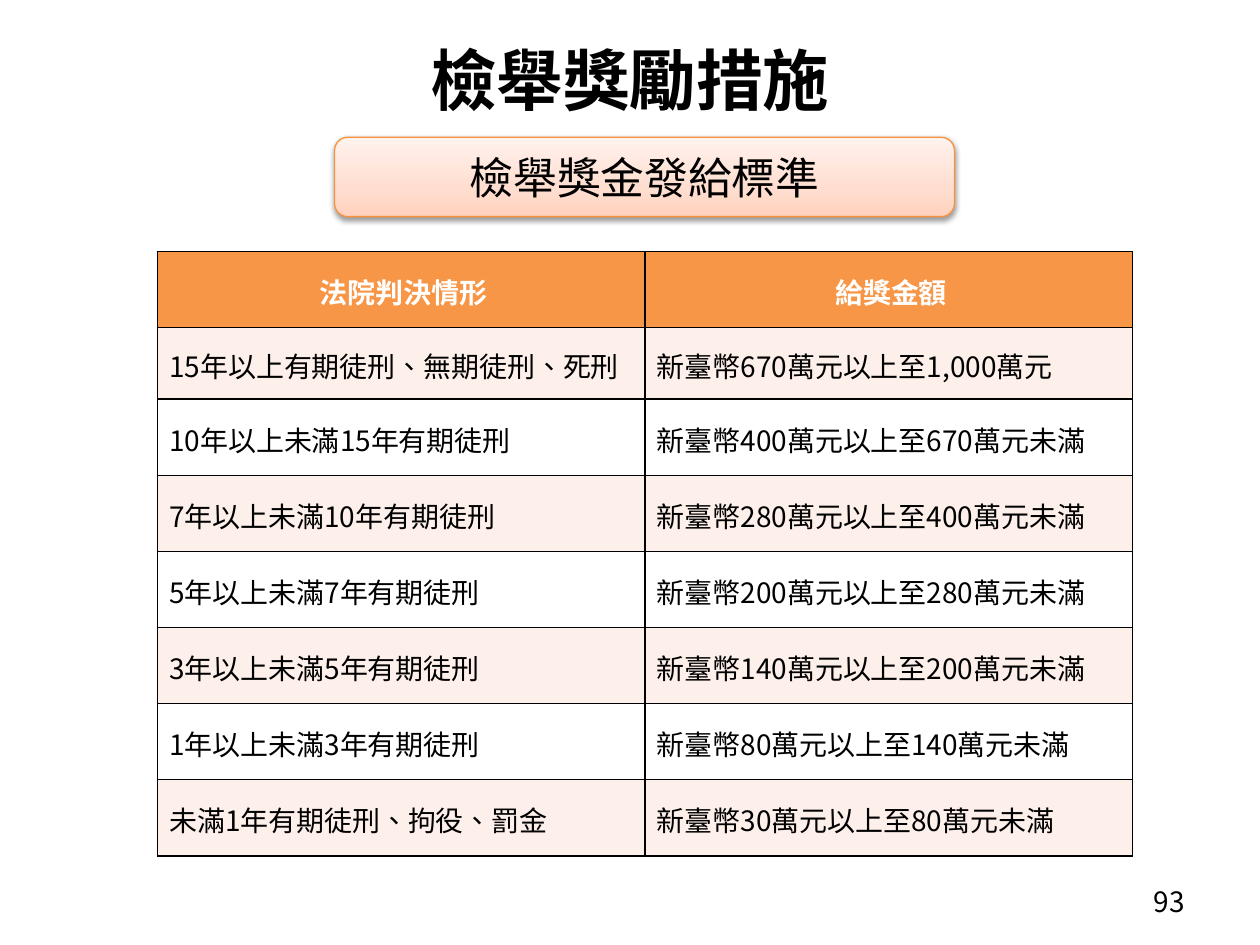
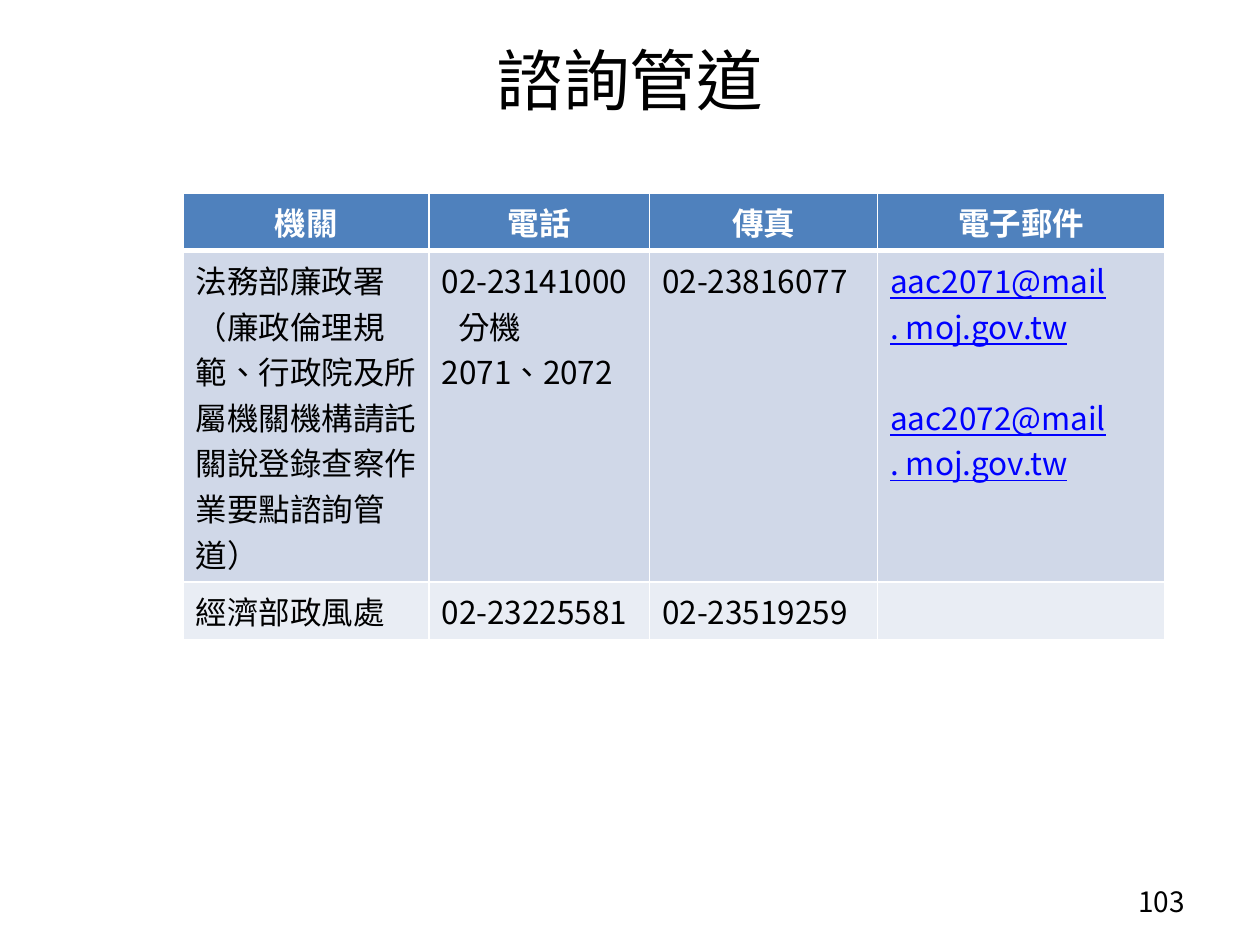
from dataclasses import dataclass

from lxml.etree import SubElement
from pptx import Presentation
from pptx.dml.color import RGBColor
from pptx.enum.shapes import MSO_SHAPE
from pptx.enum.text import MSO_ANCHOR, PP_ALIGN
from pptx.oxml.ns import qn
from pptx.util import Inches, Pt

SLIDE_WIDTH, SLIDE_HEIGHT = Inches(10), Inches(7.5)


@dataclass(frozen=True)
class Theme:
    title_font: str = "Noto Sans CJK TC"
    body_font: str = "Noto Sans CJK SC"
    header_font: str = "Arial"
    language: str = "zh-TW"
    title_size: int = 38
    banner_size: float = 25
    contact_size: int = 18
    small_size: int = 16
    black: str = "000000"
    white: str = "FFFFFF"
    link: str = "0000FF"
    orange: str = "F79646"
    banner_line: str = "F69240"
    banner_stops: tuple = ((0, "FFD2BD"), (35, "FFDED0"), (100, "FFF2ED"))
    orange_bands: tuple = ("FDEFE9", "FFFFFF")
    blue: str = "4F81BD"
    blue_bands: tuple = ("D0D8E8", "E9EDF4")


THEME = Theme()

REWARDS = [
    ("法院判決情形", "給獎金額"),
    ("15年以上有期徒刑、無期徒刑、死刑", "新臺幣670萬元以上至1,000萬元"),
    ("10年以上未滿15年有期徒刑", "新臺幣400萬元以上至670萬元未滿"),
    ("7年以上未滿10年有期徒刑", "新臺幣280萬元以上至400萬元未滿"),
    ("5年以上未滿7年有期徒刑", "新臺幣200萬元以上至280萬元未滿"),
    ("3年以上未滿5年有期徒刑", "新臺幣140萬元以上至200萬元未滿"),
    ("1年以上未滿3年有期徒刑", "新臺幣80萬元以上至140萬元未滿"),
    ("未滿1年有期徒刑、拘役、罰金", "新臺幣30萬元以上至80萬元未滿"),
]

# \v is a line break inside a paragraph, \n starts a new paragraph
CONTACTS = [
    ("機關", "電話", "傳真", "電子郵件"),
    ("法務部廉政署（廉政倫理規範、行政院及所屬機關機構請託關說登錄查察作業要點諮詢管道）",
     "02-23141000\n分機\v2071、2072", "02-23816077",
     "aac2071@mail\v. moj.gov.tw\naac2072@mail\v. moj.gov.tw"),
    ("經濟部政風處", "02-23225581", "02-23519259", ""),
]


def percent_box(left, top, width, height):
    """Turn percentages of the slide into left, top, width, height."""
    return (int(SLIDE_WIDTH * left / 100), int(SLIDE_HEIGHT * top / 100),
            int(SLIDE_WIDTH * width / 100), int(SLIDE_HEIGHT * height / 100))


def format_text(text_frame, size, color, font, align=PP_ALIGN.LEFT,
                bold=False, underline=False, east_asian=None):
    for paragraph in text_frame.paragraphs:
        paragraph.alignment = align
        # Keep punctuation inside the text area
        paragraph._p.get_or_add_pPr().set("hangingPunct", "0")
        for run in paragraph.runs:
            run.font.size = Pt(size)
            run.font.bold = bold
            run.font.underline = underline
            run.font.color.rgb = RGBColor.from_string(color)
            run.font.name = font
            properties = run.font._element
            properties.set("lang", THEME.language)
            SubElement(properties, qn("a:ea"), typeface=east_asian or font)


def add_titled_slide(presentation, title, number, bold=False):
    slide = presentation.slides.add_slide(presentation.slide_layouts[5])
    heading = slide.shapes.title
    heading.left, heading.top, heading.width, heading.height = percent_box(5, 0, 90, 16.67)
    heading.text_frame.text = title
    heading.text_frame.vertical_anchor = MSO_ANCHOR.MIDDLE
    format_text(heading.text_frame, THEME.title_size, THEME.black, THEME.title_font,
                PP_ALIGN.CENTER, bold)

    # Page number
    page = slide.shapes.add_textbox(*percent_box(71.7, 92.67, 23.3, 5.33))
    page.text_frame.word_wrap = True
    page.text_frame.vertical_anchor = MSO_ANCHOR.MIDDLE
    page.text_frame.text = number
    format_text(page.text_frame, THEME.small_size, THEME.black, THEME.title_font, PP_ALIGN.RIGHT)
    return slide


def add_color(parent, color):
    return SubElement(parent, qn("a:srgbClr"), val=color)


def add_banner(slide, text, box):
    banner = slide.shapes.add_shape(MSO_SHAPE.ROUNDED_RECTANGLE, *box)
    banner.line.color.rgb = RGBColor.from_string(THEME.banner_line)
    banner.line.width = Pt(0.75)

    # Gradient running from bottom to top
    banner.fill.gradient()
    banner.fill.gradient_angle = 90
    stops = banner.element.spPr.find(".//" + qn("a:gsLst"))
    for stop in list(stops):
        stops.remove(stop)
    for position, color in THEME.banner_stops:
        add_color(SubElement(stops, qn("a:gs"), pos=str(position * 1000)), color)

    # Soft shadow below
    banner.shadow.inherit = False
    effects = banner.element.spPr.find(qn("a:effectLst"))
    shadow = SubElement(effects, qn("a:outerShdw"), blurRad=str(Pt(3.1)),
                        dist=str(Pt(1.6)), dir="5400000", rotWithShape="0")
    SubElement(add_color(shadow, THEME.black), qn("a:alpha"), val="38000")

    banner.text_frame.vertical_anchor = MSO_ANCHOR.MIDDLE
    banner.text_frame.text = text
    format_text(banner.text_frame, THEME.banner_size, THEME.black, THEME.body_font,
                PP_ALIGN.CENTER)


def set_borders(cell, color, top_width=1, bottom_width=1):
    properties = cell._tc.get_or_add_tcPr()
    for side, width in (("L", 1), ("R", 1), ("T", top_width), ("B", bottom_width)):
        line = SubElement(properties, qn("a:ln" + side), w=str(Pt(width)))
        add_color(SubElement(line, qn("a:solidFill")), color)


def add_banded_table(slide, rows, box, widths, heights, header_fill, bands,
                     border, size, header_font, header_rule=1):
    table = slide.shapes.add_table(len(rows), len(rows[0]), *box).table
    table.first_row = table.horz_banding = False
    for column, width in zip(table.columns, widths):
        column.width = Inches(width)
    for index, (row, height, texts) in enumerate(zip(table.rows, heights, rows)):
        row.height = Inches(height)
        header = index == 0
        fill = header_fill if header else bands[(index - 1) % len(bands)]
        # The rule under the header is also the top of the first body row
        top_width = header_rule if index == 1 else 1
        bottom_width = header_rule if header else 1
        for cell, text in zip(row.cells, texts):
            set_borders(cell, border, top_width, bottom_width)
            cell.fill.solid()
            cell.fill.fore_color.rgb = RGBColor.from_string(fill)
            cell.text_frame.text = text
            if header:
                format_text(cell.text_frame, size, THEME.white, header_font,
                            PP_ALIGN.CENTER, True, east_asian=THEME.body_font)
            else:
                format_text(cell.text_frame, size, THEME.black, THEME.body_font)
    return table


def build_rewards(presentation):
    slide = add_titled_slide(presentation, "檢舉獎勵措施", "93", bold=True)
    add_banner(slide, "檢舉獎金發給標準", percent_box(26.55, 14.53, 49.2, 8.4))
    first_height = 0.57
    other_height = (4.8 - first_height) / (len(REWARDS) - 1)
    heights = [other_height, first_height] + [other_height] * (len(REWARDS) - 2)
    table = add_banded_table(
        slide, REWARDS, percent_box(12.5, 26.6, 77.4, 64), [3.87] * 2, heights,
        THEME.orange, THEME.orange_bands, THEME.black, THEME.small_size, THEME.body_font)
    for cell in table.iter_cells():
        cell.vertical_anchor = MSO_ANCHOR.MIDDLE
        cell.margin_left = cell.margin_right = Inches(0.06)
        cell.margin_top = cell.margin_bottom = 0
        paragraph = cell.text_frame.paragraphs[0]
        paragraph.line_spacing = Pt(25)
        paragraph._p.get_or_add_pPr().set("marL", str(Pt(2.5)))


def build_contacts(presentation):
    slide = add_titled_slide(presentation, "諮詢管道", "103")
    table = add_banded_table(
        slide, CONTACTS, percent_box(14.55, 20.4, 77.9, 47.2), [1.95, 1.75, 1.81, 2.28],
        [0.46, 2.63, 0.46], THEME.blue, THEME.blue_bands,
        THEME.white, THEME.contact_size, THEME.header_font, header_rule=3)

    # Indented extension, and e-mail addresses set as links one line apart
    extension = table.cell(1, 1).text_frame.paragraphs[1]
    extension._p.get_or_add_pPr().set("indent", str(Inches(0.13)))
    addresses = table.cell(1, 3).text_frame
    for paragraph in addresses.paragraphs:
        for run in paragraph.runs:
            run.font.color.rgb = RGBColor.from_string(THEME.link)
            run.font.underline = True
    addresses.paragraphs[1].space_before = Pt(26)


def main():
    presentation = Presentation()
    presentation.slide_width, presentation.slide_height = SLIDE_WIDTH, SLIDE_HEIGHT
    build_rewards(presentation)
    build_contacts(presentation)
    presentation.save("out.pptx")


if __name__ == "__main__":
    main()
